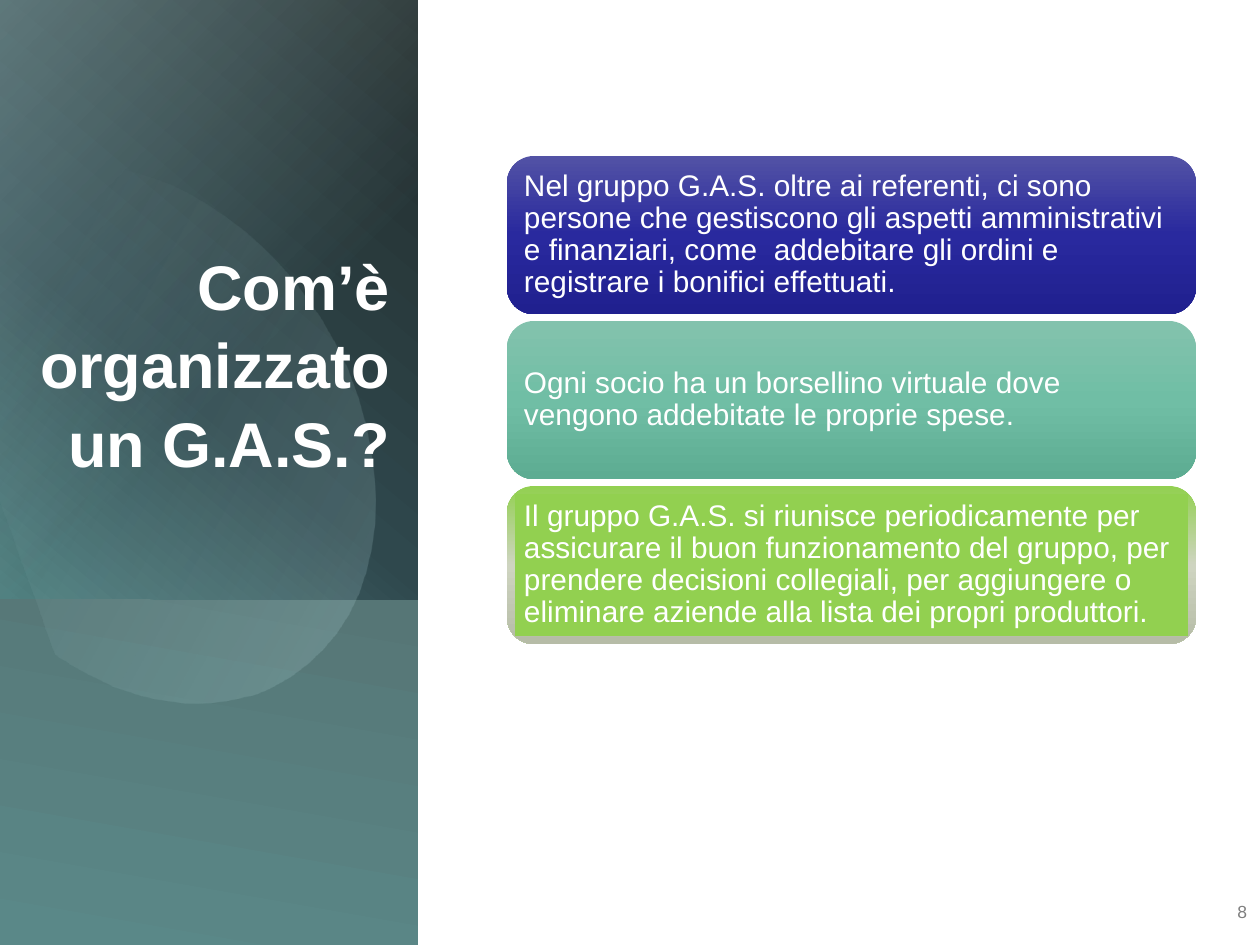
from pptx import Presentation
from pptx import util as u
from pptx.dml.color import RGBColor
from pptx.enum import shapes, text
from pptx.oxml import parse_xml
from pptx.oxml.ns import nsdecls

SCALE = 914400 / 126
FONT = "Arial"
COLORS = {
    "white": "FFFFFF", "number": "7F7F7F", "mist": "BBE0E3",
    "night": "222B2B", "slate": "2F484D", "teal": "508080", "sea": "5A8888",
    "haze": "567676", "green": "92D050",
}
CARDS = [
    (("5252A5", "29299E", "20208F"), None,
     "Nel gruppo G.A.S. oltre ai referenti, ci sono persone che gestiscono gli aspetti "
     "amministrativi e finanziari, come  addebitare gli ordini e registrare i bonifici effettuati."),
    (("83C2AD", "70BEA5", "5DAC92"), None,
     "Ogni socio ha un borsellino virtuale dove vengono addebitate le proprie spese."),
    (("92D050", "CED4C0", "B6BCA7"), "green",
     "Il gruppo G.A.S. si riunisce periodicamente per assicurare il buon funzionamento del gruppo, "
     "per prendere decisioni collegiali, per aggiungere o eliminare aziende alla lista dei propri produttori."),
]
OVAL_START = (121, 144)
OVAL_CURVES = [
    [(215, 154), (307, 242), (344, 365)],
    [(387, 519), (330, 669), (215, 702)],
    [(144, 723), (67, 693), (9, 630)],
    [(5, 625), (0, 620), (-4, 615)],
    [(-13, 480), (-22, 344), (-32, 209)],
    [(-27, 204), (-23, 199), (-19, 194)],
    [(3, 173), (28, 154), (57, 149)],
    [(78, 143), (99, 141), (121, 144)],
]


def px(value):
    return u.Emu(round(value * SCALE))


def fill_gradient(shape, stops, angle):
    marks = "".join(
        f'<a:gs pos="{place * 1000}"><a:srgbClr val="{color}">'
        f'<a:alpha val="{alpha * 1000}"/></a:srgbClr></a:gs>'
        for place, color, alpha in stops
    )
    shape.fill.background()
    properties = shape._element.spPr
    blank = properties.find("{http://schemas.openxmlformats.org/drawingml/2006/main}noFill")
    properties.replace(blank, parse_xml(
        f'<a:gradFill {nsdecls("a")} rotWithShape="1"><a:gsLst>{marks}</a:gsLst>'
        f'<a:lin ang="{angle * 60000}" scaled="0"/></a:gradFill>'
    ))


def add_block(page, kind, box):
    shape = page.shapes.add_shape(kind, *map(px, box))
    shape.shadow.inherit = False
    shape.line.fill.background()
    return shape


def write(shape, words, size, color, align, anchor, insets, spacing=1.0, bold=False):
    frame = shape.text_frame
    frame.text = words
    frame.word_wrap = True
    frame.vertical_anchor = anchor
    frame.margin_left, frame.margin_top, frame.margin_right, frame.margin_bottom = map(px, insets)
    para = frame.paragraphs[0]
    para.alignment = align
    para.line_spacing = spacing
    font = para.runs[0].font
    font.name, font.size, font.bold = FONT, u.Pt(size), bold
    font.color.rgb = RGBColor.from_string(COLORS[color])


def curve_points(start, curves, steps=16):
    points = []
    for first, second, end in curves:
        for step in range(1, steps + 1):
            t = step / steps
            points.append(tuple(
                (1 - t) ** 3 * a + 3 * (1 - t) ** 2 * t * b + 3 * (1 - t) * t ** 2 * c + t ** 3 * d
                for a, b, c, d in zip(start, first, second, end)
            ))
        start = end
    return points


def add_oval(page, left, top):
    points = [(left + x, top + y) for x, y in curve_points(OVAL_START, OVAL_CURVES)]
    builder = page.shapes.build_freeform(*points[-1], scale=SCALE)
    builder.add_line_segments(points, close=True)
    oval = builder.convert_to_shape()
    oval.shadow.inherit = False
    oval.line.fill.background()
    oval.rotation = 343.9
    fill_gradient(oval, [(0, COLORS["mist"], 0), (29, COLORS["mist"], 0), (100, COLORS["mist"], 24)], 45)


def add_side_panel(page, box):
    left, top, width, height = box
    rectangle = shapes.MSO_SHAPE.RECTANGLE
    base = add_block(page, rectangle, box)
    fill_gradient(base, [(0, COLORS["night"], 100), (45, COLORS["slate"], 100),
                         (73, COLORS["teal"], 100), (100, COLORS["sea"], 100)], 130)
    glow = add_block(page, rectangle, box)
    fill_gradient(glow, [(0, COLORS["mist"], 36), (45, COLORS["mist"], 0), (100, COLORS["mist"], 0)], 45)
    floor = add_block(page, rectangle, (left, top + 600, width, height - 600))
    fill_gradient(floor, [(0, COLORS["haze"], 100), (100, COLORS["sea"], 100)], 100)
    add_oval(page, left, top)
    title = page.shapes.add_textbox(*map(px, (left + 13, top + 232, 390, 330)))
    write(title, "Com’è organizzato un G.A.S.?", 36, "white", text.PP_ALIGN.RIGHT,
          text.MSO_ANCHOR.BOTTOM, (13, 6, 13, 82), 1.04, True)


def add_card(page, box, shades, panel, words):
    left, top, width, height = box
    card = add_block(page, shapes.MSO_SHAPE.ROUNDED_RECTANGLE, box)
    card.adjustments[0] = 0.17
    fill_gradient(card, [(place, shade, 100) for place, shade in zip((0, 50, 100), shades)], 90)
    inner = add_block(page, shapes.MSO_SHAPE.RECTANGLE, (left + 8, top + 8, width - 16, height - 16))
    if panel:
        inner.fill.solid()
        inner.fill.fore_color.rgb = RGBColor.from_string(COLORS[panel])
    else:
        inner.fill.background()
    write(inner, words, 17, "white", text.PP_ALIGN.LEFT, text.MSO_ANCHOR.MIDDLE, (9, 9, 9, 9), 0.9)


def add_cards(page, box):
    left, top, width, height = box
    gap = 7
    card_height = (height - gap * (len(CARDS) - 1)) // len(CARDS)
    for index, card in enumerate(CARDS):
        add_card(page, (left, top + index * (card_height + gap), width, card_height), *card)


def add_page_number(page, box):
    number = page.shapes.add_textbox(*map(px, box))
    write(number, "8", 10, "number", text.PP_ALIGN.RIGHT, text.MSO_ANCHOR.TOP, (13, 6, 13, 6))


def main():
    deck = Presentation()
    deck.slide_width, deck.slide_height = px(1260), px(945)
    page = deck.slides.add_slide(deck.slide_layouts[6])
    page.background.fill.solid()
    page.background.fill.fore_color.rgb = RGBColor.from_string(COLORS["white"])
    add_side_panel(page, (0, 0, 418, 945))
    add_page_number(page, (1213, 895, 47, 50))
    add_cards(page, (507, 156, 689, 488))
    deck.save("out.pptx")


if __name__ == "__main__":
    main()
